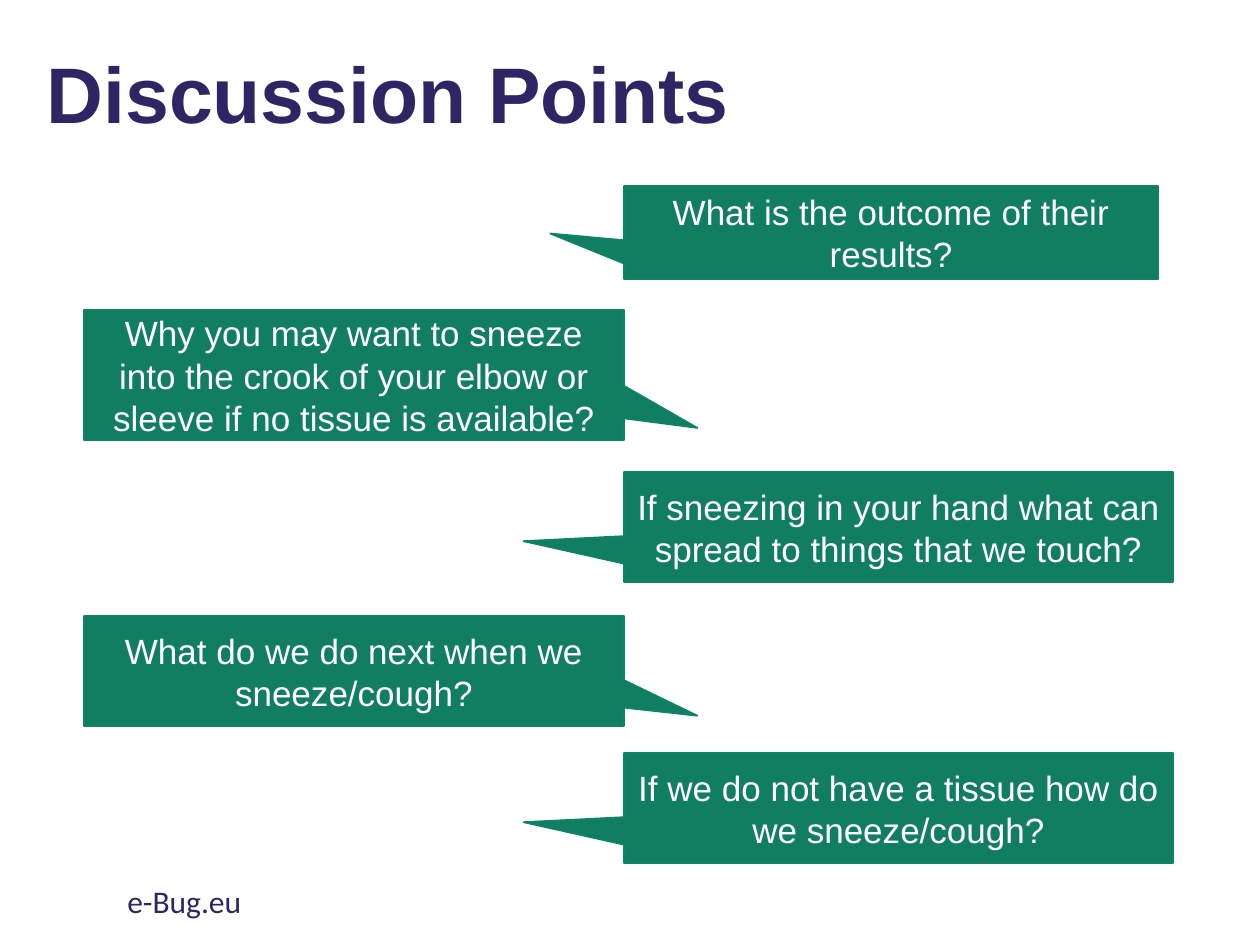
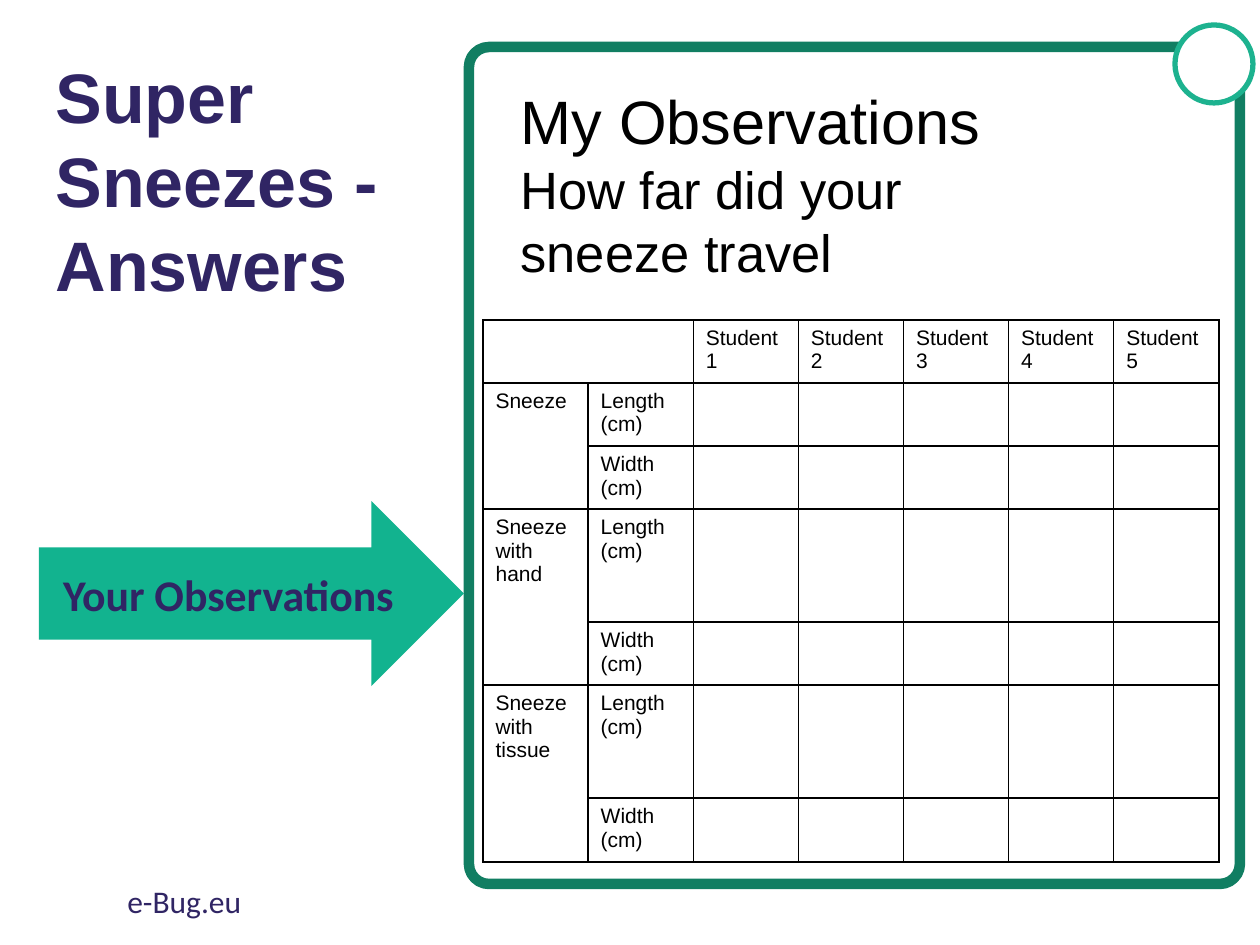
"""Builds the discussion slide and the observation sheet for the sneeze lesson."""
from lxml import etree
from pptx import Presentation
from pptx.dml.color import RGBColor
from pptx.enum.shapes import MSO_SHAPE as Preset
from pptx.enum.text import MSO_ANCHOR as Anchor, MSO_AUTO_SIZE as AutoSize, PP_ALIGN as Align
from pptx.oxml import parse_xml
from pptx.oxml.ns import nsdecls
from pptx.util import Emu, Pt

PX_PER_INCH = 126
NAVY = RGBColor(0x30, 0x25, 0x64)
GREEN = RGBColor(0x11, 0x7E, 0x62)
EDGE_GREEN = RGBColor(0x0D, 0x84, 0x6A)
ARROW_GREEN = RGBColor(0x12, 0xB3, 0x8F)
RING_GREEN = RGBColor(0x1D, 0xB2, 0x8F)
WHITE = RGBColor(0xFF, 0xFF, 0xFF)
BLACK = RGBColor(0, 0, 0)

FOOTER = "e-Bug.eu"
FOOTER_BOX = (115, 876, 426, 50)
LEFT, RIGHT = 84, 624
CALLOUTS = [
    ("What is the outcome of their results?", (RIGHT, 186, 534, 93), (-0.638, 0.011)),
    ("Why you may want to sneeze into the crook of your elbow or sleeve if no tissue is available?",
     (LEFT, 310, 540, 130), (0.636, 0.407)),
    ("If sneezing in your hand what can spread to things that we touch?",
     (RIGHT, 472, 549, 110), (-0.683, 0.129)),
    ("What do we do next when we sneeze/cough?", (LEFT, 616, 540, 110), (0.636, 0.407)),
    ("If we do not have a tissue how do we sneeze/cough?",
     (RIGHT, 753, 549, 110), (-0.683, 0.129)),
]
STUDENTS = [f"Student {number}" for number in range(1, 6)]
SNEEZES = ["Sneeze", "Sneeze with hand", "Sneeze with tissue"]
MEASURES = ["Length (cm)", "Width (cm)"]
TABLE_BOX = (483, 320, 736, 542)
ROW_HEIGHTS = [63, 63, 63, 113, 63, 113, 64]


def px(length):
    return Emu(round(length * 914400 / PX_PER_INCH))


def place(box):
    return [px(length) for length in box]


def write(frame, *lines, sizes, color, font="Arial", bold=False,
          align=Align.LEFT, anchor=Anchor.TOP, spacing=None):
    frame.word_wrap = True
    frame.vertical_anchor = anchor
    for index, (line, size) in enumerate(zip(lines, sizes)):
        paragraph = frame.add_paragraph() if index else frame.paragraphs[0]
        paragraph.alignment = align
        paragraph.line_spacing = spacing
        run = paragraph.add_run()
        run.text = line
        run.font.name, run.font.size, run.font.bold = font, Pt(size), bold
        run.font.color.rgb = color


def add_text(slide, box, *lines, **style):
    write(slide.shapes.add_textbox(*place(box)).text_frame, *lines, **style)


def add_shape(slide, preset, box, fill=None, line=None, width=1, adjustments=()):
    shape = slide.shapes.add_shape(preset, *place(box))
    shape.shadow.inherit = False
    for index, value in enumerate(adjustments):
        shape.adjustments[index] = value
    if fill is None:
        shape.fill.background()
    else:
        shape.fill.solid()
        shape.fill.fore_color.rgb = fill
    if line is None:
        shape.line.fill.background()
    else:
        shape.line.color.rgb = line
        shape.line.width = Pt(width)
    return shape


def add_slide(presentation, title, box, **style):
    slide = presentation.slides.add_slide(presentation.slide_layouts[5])
    shape = slide.shapes.title
    shape.left, shape.top, shape.width, shape.height = place(box)
    shape.text_frame.auto_size = AutoSize.NONE
    write(shape.text_frame, title, color=NAVY, bold=True, **style)
    add_text(slide, FOOTER_BOX, FOOTER, sizes=[18], color=NAVY, font="Calibri")
    return slide


def add_borders(cell):
    properties = cell._tc.get_or_add_tcPr()
    for index, side in enumerate("LRTB"):
        border = parse_xml(f'<a:ln{side} {nsdecls("a")} w="12700"/>')
        fill = etree.SubElement(border, border.tag.replace(f"ln{side}", "solidFill"))
        etree.SubElement(fill, fill.tag.replace("solidFill", "srgbClr"), val=str(BLACK))
        properties.insert(index, border)


def add_observation_table(slide):
    column_count = 2 + len(STUDENTS)
    table = slide.shapes.add_table(len(ROW_HEIGHTS), column_count, *place(TABLE_BOX)).table
    table.first_row = table.horz_banding = False
    for column in table.columns:
        column.width = px(TABLE_BOX[2] / column_count)
    for row, height in zip(table.rows, ROW_HEIGHTS):
        row.height = px(height)
    for cell in table.iter_cells():
        cell.fill.background()
        add_borders(cell)

    labels = {(0, column): student for column, student in enumerate(STUDENTS, 2)}
    table.cell(0, 0).merge(table.cell(0, 1))
    for group, sneeze in enumerate(SNEEZES):
        top = 1 + group * len(MEASURES)
        table.cell(top, 0).merge(table.cell(top + len(MEASURES) - 1, 0))
        labels[top, 0] = sneeze
        labels.update({(top + offset, 1): measure for offset, measure in enumerate(MEASURES)})
    for position, label in labels.items():
        write(table.cell(*position).text_frame, label, sizes=[12], color=BLACK)


def build_discussion(presentation):
    slide = add_slide(presentation, "Discussion Points", (34, 33, 1086, 130),
                      sizes=[45], anchor=Anchor.MIDDLE, spacing=0.9)
    for question, box, tip in CALLOUTS:
        callout = add_shape(slide, Preset.RECTANGULAR_CALLOUT, box, GREEN, EDGE_GREEN,
                            adjustments=tip)
        write(callout.text_frame, question, sizes=[20], color=WHITE,
              align=Align.CENTER, anchor=Anchor.MIDDLE)


def build_answers(presentation):
    slide = add_slide(presentation, "Super Sneezes - Answers", (43, 47, 426, 267),
                      sizes=[40], spacing=1.0)
    add_shape(slide, Preset.ROUNDED_RECTANGLE, (469, 47, 771, 837), line=GREEN, width=6,
              adjustments=[0.026])
    add_shape(slide, Preset.OVAL, (1175, 25, 78, 78), WHITE, RING_GREEN, width=3)
    arrow = add_shape(slide, Preset.RIGHT_ARROW, (39, 501, 425, 185), ARROW_GREEN)
    write(arrow.text_frame, "Your Observations", sizes=[25], color=NAVY, font="Calibri",
          bold=True, align=Align.CENTER, anchor=Anchor.MIDDLE)
    add_text(slide, (508, 77, 549, 214), "My Observations", "How far did your sneeze travel",
             sizes=[35, 30], color=BLACK)
    add_observation_table(slide)


def main():
    presentation = Presentation()
    presentation.slide_width, presentation.slide_height = px(1260), px(945)
    build_discussion(presentation)
    build_answers(presentation)
    presentation.save("out.pptx")


if __name__ == "__main__":
    main()
